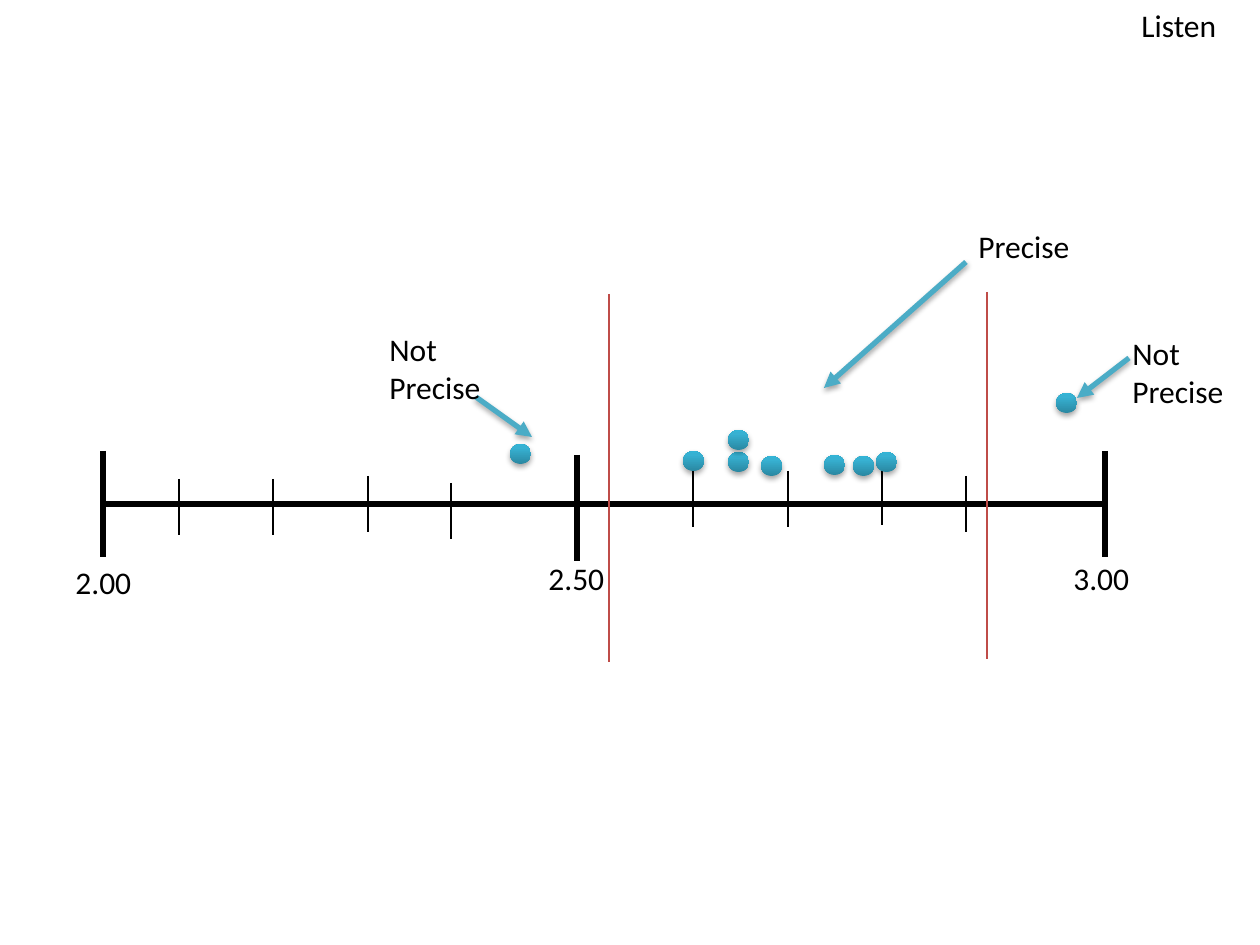
from typing import NamedTuple

from lxml import etree
from pptx import Presentation
from pptx.dml.color import RGBColor
from pptx.enum.shapes import MSO_CONNECTOR, MSO_SHAPE
from pptx.enum.text import MSO_AUTO_SIZE
from pptx.oxml.ns import qn
from pptx.util import Emu, Pt

STRAIGHT = MSO_CONNECTOR.STRAIGHT
OVAL = MSO_SHAPE.OVAL
FIT_TEXT = MSO_AUTO_SIZE.SHAPE_TO_FIT_TEXT

BLACK = RGBColor(0x00, 0x00, 0x00)
RED = RGBColor(0xBF, 0x4C, 0x48)
TEAL = RGBColor(0x4B, 0xAC, 0xC6)
DOT_STOPS = (
    (0, RGBColor(0x2A, 0x88, 0xA2)),
    (80, RGBColor(0x37, 0xB1, 0xD2)),
    (100, RGBColor(0x34, 0xB4, 0xD6)),
)

FONT = "Calibri"
PX_PER_INCH = 126
SLIDE_WIDTH, SLIDE_HEIGHT = 1260, 945
AXIS_Y = 504
MAJOR_TICK, MINOR_TICK = 106, 56
DOT_WIDTH, DOT_HEIGHT = 21, 20


class Tick(NamedTuple):
    x: int
    top: int


class Dot(NamedTuple):
    left: int
    top: int


class Segment(NamedTuple):
    x1: int
    y1: int
    x2: int
    y2: int


class Label(NamedTuple):
    text: str
    left: int
    top: int
    width: int
    height: int


MAJOR_TICKS = (Tick(103, 451), Tick(577, 455), Tick(1105, 451))
MINOR_TICKS = (
    Tick(179, 479), Tick(273, 479), Tick(368, 476), Tick(451, 483),
    Tick(693, 471), Tick(788, 471), Tick(882, 469), Tick(966, 476),
)
MEASUREMENTS = (
    Dot(683, 451), Dot(728, 452), Dot(824, 455), Dot(876, 452), Dot(853, 456),
    Dot(728, 430), Dot(761, 456), Dot(510, 444), Dot(1056, 393),
)
PRECISION_LIMITS = (Segment(609, 294, 609, 662), Segment(987, 292, 987, 659))
POINTERS = (
    Segment(966, 262, 824, 388),
    Segment(1129, 358, 1077, 398),
    Segment(476, 397, 532, 437),
)
LABELS = (
    Label("2.00", 63, 557, 136, 50),
    Label("2.50", 536, 553, 136, 50),
    Label("3.00", 1061, 553, 136, 50),
    Label("Precise", 966, 221, 221, 53),
    Label("Not Precise", 1120, 328, 130, 89),
    Label("Not Precise", 377, 324, 130, 89),
    Label("Listen", 1129, 0, 131, 50),
)


def px(length: int) -> Emu:
    return Emu(round(length * 914400 / PX_PER_INCH))


def add_effects(shape, shadow: bool) -> None:
    effects = etree.SubElement(shape._element.spPr, qn("a:effectLst"))
    if shadow:
        outer = etree.SubElement(
            effects, qn("a:outerShdw"), blurRad="40000", dist="23000",
            dir="5400000", rotWithShape="0",
        )
        tint = etree.SubElement(outer, qn("a:srgbClr"), val=str(BLACK))
        etree.SubElement(tint, qn("a:alpha"), val="35000")


def add_line(slide, segment: Segment, color: RGBColor, weight: float, arrow: bool = False) -> None:
    connector = slide.shapes.add_connector(STRAIGHT, *map(px, segment))
    connector.line.color.rgb = color
    connector.line.width = Pt(weight)
    if arrow:
        outline = connector.line._get_or_add_ln()
        etree.SubElement(outline, qn("a:tailEnd"), type="triangle")
    add_effects(connector, shadow=arrow)


def add_tick(slide, tick: Tick, length: int, weight: float) -> None:
    add_line(slide, Segment(tick.x, tick.top, tick.x, tick.top + length), BLACK, weight)


def add_dot(slide, dot: Dot) -> None:
    oval = slide.shapes.add_shape(
        OVAL, px(dot.left), px(dot.top), px(DOT_WIDTH), px(DOT_HEIGHT)
    )
    oval.line.fill.background()
    oval.fill.gradient()
    gradient = oval._element.spPr.find(qn("a:gradFill"))
    stops = gradient.find(qn("a:gsLst"))
    for stop in list(stops):
        stops.remove(stop)
    for percent, color in DOT_STOPS:
        stop = etree.SubElement(stops, qn("a:gs"), pos=str(percent * 1000))
        etree.SubElement(stop, qn("a:srgbClr"), val=str(color))
    gradient.find(qn("a:lin")).set("ang", "16200000")
    add_effects(oval, shadow=True)


def add_text(slide, label: Label, *, size: int = 18, color: RGBColor = BLACK) -> None:
    box = slide.shapes.add_textbox(*map(px, label[1:]))
    frame = box.text_frame
    frame.word_wrap = True
    frame.auto_size = FIT_TEXT
    run = frame.paragraphs[0].add_run()
    run.text = label.text
    run.font.name = FONT
    run.font.size = Pt(size)
    run.font.color.rgb = color


def main() -> None:
    presentation = Presentation()
    presentation.slide_width = px(SLIDE_WIDTH)
    presentation.slide_height = px(SLIDE_HEIGHT)
    slide = presentation.slides.add_slide(presentation.slide_layouts[6])

    add_line(slide, Segment(105, AXIS_Y, 1103, AXIS_Y), BLACK, 3)
    for tick in MAJOR_TICKS:
        add_tick(slide, tick, MAJOR_TICK, 3)
    for tick in MINOR_TICKS:
        add_tick(slide, tick, MINOR_TICK, 1.5)
    for dot in MEASUREMENTS:
        add_dot(slide, dot)
    for limit in PRECISION_LIMITS:
        add_line(slide, limit, RED, 0.75)
    for pointer in POINTERS:
        add_line(slide, pointer, TEAL, 3, arrow=True)
    for label in LABELS:
        add_text(slide, label)

    presentation.save("out.pptx")


if __name__ == "__main__":
    main()
